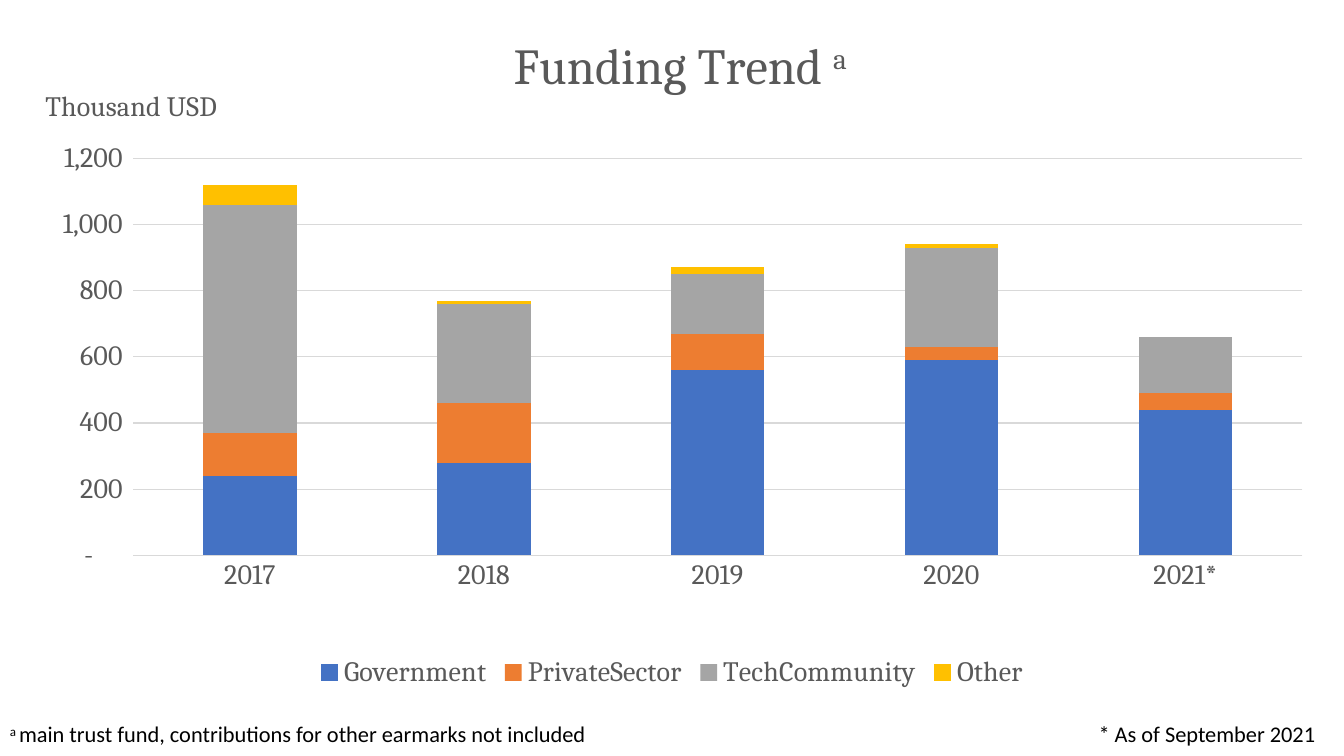
"""Build a slide with a stacked column chart of yearly funding and two footnotes."""
from dataclasses import dataclass

from pptx import Presentation
from pptx import util as u
from pptx.chart.data import CategoryChartData
from pptx.dml.color import RGBColor
from pptx.enum import chart as ch, text
from pptx.oxml import parse_xml
from pptx.oxml.ns import nsdecls, qn

GREY, GRID = "595959", "D9D9D9"
YEARS = ["2017", "2018", "2019", "2020", "2021*"]
NUMBER_FORMAT = '_(* #,##0_);_(* \\(#,##0\\);_(* "-"??_);_(@_)'


@dataclass
class Source:
    name: str
    amounts: list[int]
    color: str


@dataclass
class Footnote:
    mark: str
    words: str
    left: float
    width: float


SOURCES = [
    Source("Government", [240, 280, 560, 590, 440], "4472C4"),
    Source("PrivateSector", [130, 180, 110, 40, 50], "ED7D31"),
    Source("TechCommunity", [690, 300, 180, 300, 170], "A5A5A5"),
    Source("Other", [60, 10, 20, 10, 0], "FFC000"),
]
FOOTNOTES = [
    Footnote("", "* As of September 2021", 777.6, 171.4),
    Footnote("a ", "main trust fund, contributions for other earmarks not included", 0, 435.6),
]


def rgb(value: str) -> RGBColor:
    return RGBColor.from_string(value)


def format_font(font, size: float, color: str = GREY, name: str = "Cambria") -> None:
    font.size, font.name, font.bold = u.Pt(size), name, False
    font.color.rgb = rgb(color)


def add_span(para, words: str, *, size: float, color: str = GREY,
             name: str = "Cambria", raised: bool = False) -> None:
    span = para.add_run()
    span.text = words
    format_font(span.font, size, color, name)
    if raised:
        span.font._element.set("baseline", "30000")


def place(element, **fractions: float) -> None:
    layout = element.find(qn("c:layout"))
    if layout is None:
        layout = parse_xml(f"<c:layout {nsdecls('c')}/>")
        element.insert(0, layout)
    inner = '<c:layoutTarget val="inner"/>' if "w" in fractions else ""
    modes = "".join(f'<c:{key}Mode val="edge"/>' for key in "xy")
    values = "".join(f'<c:{key} val="{value}"/>' for key, value in fractions.items())
    layout.append(parse_xml(
        f"<c:manualLayout {nsdecls('c')}>{inner}{modes}{values}</c:manualLayout>"))


def add_footnote(page, note: Footnote) -> None:
    box = page.shapes.add_textbox(u.Pt(note.left), u.Pt(511.2), u.Pt(note.width), u.Pt(26.6))
    box.text_frame.word_wrap = False
    box.text_frame.auto_size = text.MSO_AUTO_SIZE.SHAPE_TO_FIT_TEXT
    para = box.text_frame.paragraphs[0]
    style = {"size": 16, "color": "000000", "name": "Calibri"}
    if note.mark:
        add_span(para, note.mark, raised=True, **style)
    add_span(para, note.words, **style)


def format_axes(chart) -> None:
    years, amounts = chart.category_axis, chart.value_axis
    for axis in (years, amounts):
        axis.major_tick_mark = axis.minor_tick_mark = ch.XL_TICK_MARK.NONE
        format_font(axis.tick_labels.font, 20)
    amounts.minimum_scale, amounts.maximum_scale, amounts.major_unit = 0, 1200, 200
    amounts.tick_labels.number_format = NUMBER_FORMAT
    amounts.tick_labels.number_format_is_linked = False
    amounts.format.line.fill.background()
    for line in (years.format.line, amounts.major_gridlines.format.line):
        line.color.rgb = rgb(GRID)
        line.width = u.Pt(0.75)
    frame = amounts.axis_title.text_frame
    add_span(frame.paragraphs[0], "Thousand USD", size=20)
    frame._txBody.bodyPr.set("rot", "0")
    frame._txBody.bodyPr.set("vert", "horz")
    place(amounts.axis_title._element, x=0.03, y=0.12)


def add_funding_chart(page) -> None:
    data = CategoryChartData()
    data.categories = YEARS
    for source in SOURCES:
        data.add_series(source.name, source.amounts)
    chart = page.shapes.add_chart(
        ch.XL_CHART_TYPE.COLUMN_STACKED, 0, 0, u.Pt(960), u.Pt(496), data).chart
    format_font(chart.font, 20)
    chart.has_title = True
    para = chart.chart_title.text_frame.paragraphs[0]
    add_span(para, "Funding Trend ", size=36)
    add_span(para, "a", size=36, raised=True)
    place(chart.chart_title._element, x=0.38, y=0.05)
    chart.has_legend = True
    chart.legend.position = ch.XL_LEGEND_POSITION.BOTTOM
    chart.legend.include_in_layout = False
    format_font(chart.legend.font, 20)
    plot = chart.plots[0]
    plot.gap_width, plot.overlap, plot.vary_by_categories = 150, 100, False
    for series, source in zip(plot.series, SOURCES):
        series.format.fill.solid()
        series.format.fill.fore_color.rgb = rgb(source.color)
    format_axes(chart)
    place(chart._chartSpace.chart.plotArea, x=0.099, y=0.228, w=0.87, h=0.572)


def main() -> None:
    deck = Presentation()
    deck.slide_width, deck.slide_height = u.Pt(960), u.Pt(540)
    page = deck.slides.add_slide(deck.slide_layouts[6])
    for note in FOOTNOTES:
        add_footnote(page, note)
    add_funding_chart(page)
    deck.save("out.pptx")


if __name__ == "__main__":
    main()
